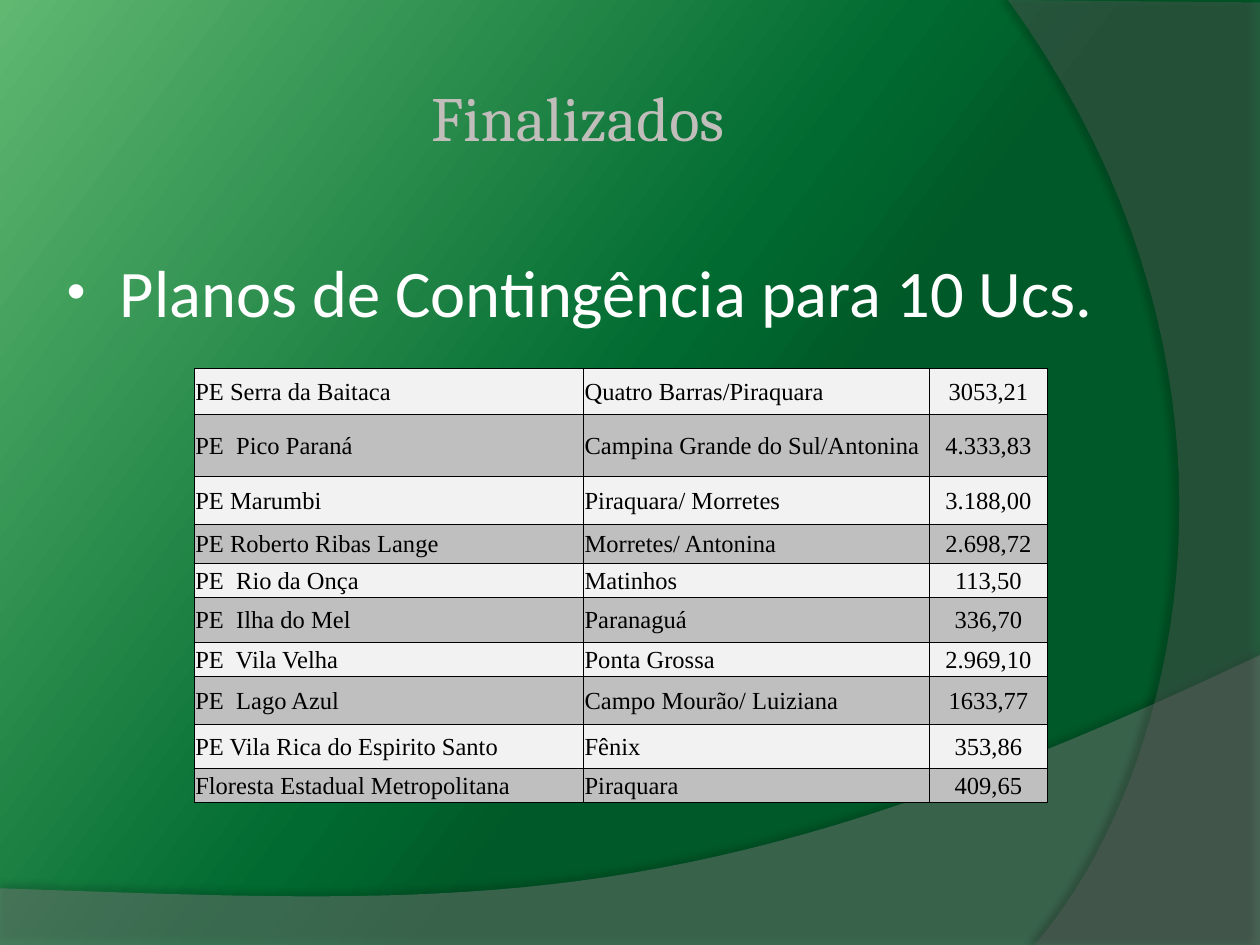
from lxml.etree import SubElement
from pptx import Presentation
from pptx.dml.color import RGBColor
from pptx.enum.text import MSO_ANCHOR, MSO_AUTO_SIZE, PP_ALIGN
from pptx.oxml.ns import qn
from pptx.util import Inches, Pt

TITLE = "Finalizados"
BULLET = "Planos de Contingência para 10 Ucs."
PARKS = [  # name, municipality, area, row height
    ("PE Serra da Baitaca", "Quatro Barras/Piraquara", "3053,21", 0.37),
    ("PE  Pico Paraná", "Campina Grande do Sul/Antonina", "4.333,83", 0.49),
    ("PE Marumbi", "Piraquara/ Morretes", "3.188,00", 0.38),
    ("PE Roberto Ribas Lange", "Morretes/ Antonina", "2.698,72", 0.31),
    ("PE  Rio da Onça", "Matinhos", "113,50", 0.27),
    ("PE  Ilha do Mel", "Paranaguá", "336,70", 0.36),
    ("PE  Vila Velha", "Ponta Grossa", "2.969,10", 0.27),
    ("PE  Lago Azul", "Campo Mourão/ Luiziana", "1633,77", 0.38),
    ("PE Vila Rica do Espirito Santo", "Fênix", "353,86", 0.35),
    ("Floresta Estadual Metropolitana", "Piraquara", "409,65", 0.27),
]
COLUMN_WIDTHS = [3.09, 2.75, 0.93]
ROW_FILLS = ["F2F2F2", "BFBFBF"]
GRADIENT = [(42, "005928"), (53, "006A30"), (100, "60B871")]
WAVES = [  # straight corners, then a Bézier curve that starts at the last one
    dict(corners=[(0, 7.05), (0, 7.5), (10, 7.5), (10, 5.2)],
         curve=[(5.59, 7.29), (3.91, 7.19), (0, 7.05)],
         color="7F7F7F", opacity=45, shadow=(35, 4, 3.5, 270)),
    dict(corners=[(10, 0.02), (10, 7.5), (8.21, 7.5)],
         curve=[(9.35, 6.19), (10.18, 3), (8, 0)],
         color="5E5E5E", opacity=40, shadow=(45, 4, 4, 180)),
]


def add_xml(parent, tag, **attributes):
    return SubElement(parent, qn(tag), {k: str(v) for k, v in attributes.items()})


def style_text(paragraph, size, font_name, color):
    font = paragraph.runs[0].font
    font.size, font.name = Pt(size), font_name
    font.color.rgb = RGBColor.from_string(color)


def place(shape, left, top, width, height):
    shape.left, shape.top = Inches(left), Inches(top)
    shape.width, shape.height = Inches(width), Inches(height)
    shape.text_frame.auto_size = MSO_AUTO_SIZE.NONE


def bezier(points, steps=40):
    """Return the points of a cubic curve, without its start."""
    result = []
    for step in range(1, steps + 1):
        t = step / steps
        weights = [(1 - t) ** 3, 3 * t * (1 - t) ** 2, 3 * t * t * (1 - t), t ** 3]
        result.append(tuple(sum(w * p[axis] for w, p in zip(weights, points))
                            for axis in (0, 1)))
    return result


def set_background(slide):
    fill = slide.background.fill
    fill.gradient()
    fill.gradient_angle = 360 - 217
    stops = slide.element.find(".//" + qn("a:gsLst"))
    stops.clear()
    for position, color in GRADIENT:
        stop = add_xml(stops, "a:gs", pos=position * 1000)
        add_xml(stop, "a:srgbClr", val=color)


def add_wave(slide, position, corners, curve, color, opacity, shadow):
    outline = corners + bezier([corners[-1]] + curve)
    points = [(Inches(x), Inches(y)) for x, y in outline]
    builder = slide.shapes.build_freeform(*points[0])
    builder.add_line_segments(points[1:], close=True)
    shape = builder.convert_to_shape()
    shape.fill.solid()
    shape.fill.fore_color.rgb = RGBColor.from_string(color)
    shape.line.fill.background()
    shape.shadow.inherit = False
    properties = shape.element.spPr
    fill_color = properties.find(qn("a:solidFill")).find(qn("a:srgbClr"))
    add_xml(fill_color, "a:alpha", val=opacity * 1000)
    strength, blur, distance, angle = shadow
    outer = add_xml(properties.find(qn("a:effectLst")), "a:outerShdw", blurRad=Pt(blur),
                    dist=Pt(distance), dir=angle * 60000, algn="ctr", rotWithShape=0)
    add_xml(add_xml(outer, "a:srgbClr", val="000000"), "a:alpha", val=strength * 1000)
    slide.shapes.element.insert(2 + position, shape.element)  # behind the text


def add_title(slide):
    title = slide.shapes.title
    place(title, 0.5, 0.3, 8.17, 1.25)
    frame = title.text_frame
    frame.text = TITLE
    frame.vertical_anchor = MSO_ANCHOR.MIDDLE
    frame.margin_left = frame.margin_right = Inches(0.05)
    frame.paragraphs[0].alignment = PP_ALIGN.CENTER
    style_text(frame.paragraphs[0], 36, "Cambria", "C0BDBA")


def add_bullet(slide):
    body = slide.placeholders[1]
    place(body, 0.39, 1.94, 8.67, 0.8)
    body.text_frame.text = BULLET
    paragraph = body.text_frame.paragraphs[0]
    paragraph.space_before = Pt(0)
    properties = paragraph._p.get_or_add_pPr()
    properties.set("marL", str(Inches(0.46)))
    properties.set("indent", str(Inches(-0.42)))
    add_xml(add_xml(properties, "a:buClr"), "a:srgbClr", val="FFFFFF")
    add_xml(properties, "a:buSzPct", val=80000)
    add_xml(properties, "a:buFont", typeface="Arial")
    add_xml(properties, "a:buChar", char="•")
    style_text(paragraph, 38, "Calibri", "FFFFFF")


def format_cell(cell, text, fill, centred):
    cell.text = text
    cell.vertical_anchor = MSO_ANCHOR.MIDDLE
    cell.margin_left = cell.margin_right = cell.margin_top = Inches(0.01)
    cell.margin_bottom = 0
    paragraph = cell.text_frame.paragraphs[0]
    paragraph.alignment = PP_ALIGN.CENTER if centred else PP_ALIGN.LEFT
    style_text(paragraph, 14, "Times New Roman", "000000")
    properties = cell._tc.get_or_add_tcPr()
    for side in "LRTB":
        border = add_xml(properties, "a:ln" + side, w=Pt(0.5))
        add_xml(add_xml(border, "a:solidFill"), "a:srgbClr", val="000000")
    cell.fill.solid()
    cell.fill.fore_color.rgb = RGBColor.from_string(fill)


def add_parks_table(slide):
    heights = [park[-1] for park in PARKS]
    table = slide.shapes.add_table(
        len(PARKS), len(COLUMN_WIDTHS), Inches(1.54), Inches(2.92),
        Inches(sum(COLUMN_WIDTHS)), Inches(sum(heights))).table
    table.first_row = table.horz_banding = False
    for column, width in zip(table.columns, COLUMN_WIDTHS):
        column.width = Inches(width)
    for r, (*texts, height) in enumerate(PARKS):
        table.rows[r].height = Inches(height)
        for c, text in enumerate(texts):
            format_cell(table.cell(r, c), text, ROW_FILLS[r % 2], centred=c == 2)


def main():
    presentation = Presentation()
    presentation.slide_width, presentation.slide_height = Inches(10), Inches(7.5)
    slide = presentation.slides.add_slide(presentation.slide_layouts[1])
    set_background(slide)
    for position, wave in enumerate(WAVES):
        add_wave(slide, position, **wave)
    add_title(slide)
    add_bullet(slide)
    add_parks_table(slide)
    presentation.save("out.pptx")


if __name__ == "__main__":
    main()
